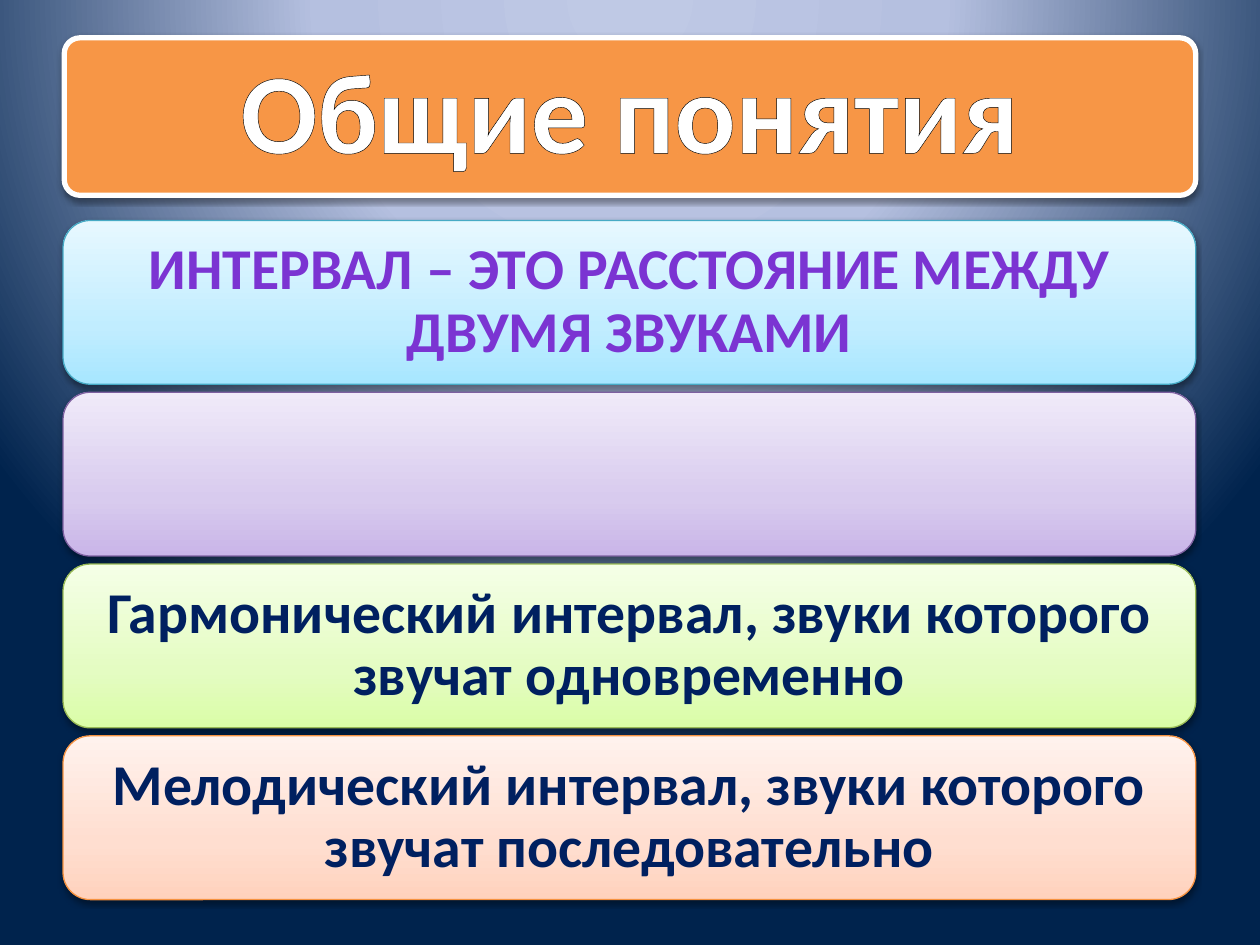
from lxml.etree import SubElement as Sub
from pptx import Presentation
from pptx.dml.color import RGBColor as Rgb
from pptx.enum.shapes import MSO_SHAPE as Kind
from pptx.enum.text import MSO_ANCHOR as Anchor, PP_ALIGN as Align
from pptx.oxml.ns import qn
from pptx.oxml.xmlchemy import OxmlElement as Elem
from pptx.util import Inches, Pt

NAVY = "002060"
BANDS = [
    ("46AAC5", [(0, "A7E6FF"), (35, "C1EDFF"), (100, "E7F8FF")],
     "ИНТЕРВАЛ – ЭТО РАССТОЯНИЕ МЕЖДУ ДВУМЯ ЗВУКАМИ",
     [(0, "3D1B67"), (43, "7B34D2"), (48, "7330C4"), (100, "3D1B67")],
     ("5E457C", 0.71)),
    ("7D60A0", [(0, "C9B5E8"), (35, "D8CBEE"), (100, "F0EAF9")],
     "", NAVY, None),
    ("98B955", [(0, "DAFDA7"), (35, "E4FCC2"), (100, "F5FFE7")],
     "Гармонический интервал, звуки которого звучат одновременно",
     NAVY, ("467AB8", 0.83)),
    ("F69240", [(0, "FFD2BD"), (35, "FFDED0"), (100, "FFF2ED")],
     "Мелодический интервал, звуки которого звучат последовательно",
     NAVY, None),
]


def color(text):
    return Rgb.from_string(text)


def add(root, tag, **attrs):
    return Sub(root, qn(tag), {key: str(val) for key, val in attrs.items()})


def blend(fill, root, stops, angle=None):
    fill.gradient()
    grad = root.find(".//" + qn("a:gradFill"))
    for node in list(grad):
        grad.remove(node)
    steps = add(grad, "a:gsLst")
    for pos, tone in stops:
        stop = add(steps, "a:gs", pos=pos * 1000)
        add(stop, "a:srgbClr", val=color(tone))
    if angle is None:
        way = add(grad, "a:path", path="circle")
        add(way, "a:fillToRect", l=50000, t=-80000, r=50000, b=180000)
    else:
        add(grad, "a:lin", ang=angle * 60000, scaled=0)


def paint(fill, root, paint_with, angle):
    if isinstance(paint_with, str):
        fill.solid()
        fill.fore_color.rgb = color(paint_with)
    else:
        blend(fill, root, paint_with, angle)


def shade(shape):
    shape.shadow.inherit = False
    effects = shape.element.spPr.find(qn("a:effectLst"))
    drop = add(effects, "a:outerShdw", blurRad=Pt(3.1), dist=Pt(1.6),
               dir=90 * 60000, rotWithShape=0)
    tone = add(drop, "a:srgbClr", val="000000")
    add(tone, "a:alpha", val=38000)


def outline(run, tone, width):
    line = Elem("a:ln")
    line.set("w", str(Pt(width)))
    add(add(line, "a:solidFill"), "a:srgbClr", val=color(tone))
    run._r.get_or_add_rPr().insert(0, line)


def add_card(slide, box, fill, edge, width):
    shape = slide.shapes.add_shape(
        Kind.ROUNDED_RECTANGLE, *[Inches(size) for size in box])
    paint(shape.fill, shape.element, fill, 270)
    shape.line.color.rgb = color(edge)
    shape.line.width = Pt(width)
    shade(shape)
    return shape


def add_text(shape, text, size, tone, rim, pad):
    frame = shape.text_frame
    frame.word_wrap = True
    frame.vertical_anchor = Anchor.MIDDLE
    frame.margin_left = frame.margin_right = Inches(0.14)
    frame.margin_top = frame.margin_bottom = Inches(pad)
    par = frame.paragraphs[0]
    par.alignment = Align.CENTER
    par.line_spacing = 0.9
    run = par.add_run()
    run.text = text
    font = run.font
    font.name = "Calibri"
    font.size = Pt(size)
    font.bold = True
    paint(font.fill, run._r, tone, 90)
    if rim:
        outline(run, *rim)


def main():
    deck = Presentation()
    deck.slide_width, deck.slide_height = Inches(10), Inches(7.5)
    slide = deck.slides.add_slide(deck.slide_layouts[6])
    blend(slide.background.fill, slide.element,
          [(0, "BFC9E5"), (40, "B5C0E0"), (100, "00234D")])

    title = add_card(slide, (0.51, 0.3, 8.98, 1.25), "F79646", "FFFFFF", 3)
    title.adjustments[0] = 0.1
    add_text(title, "Общие понятия", 65, "FFFFFF", ("000000", 0.75), 0.09)

    top, end, high = 1.75, 7.14, 1.3
    step = (end - top - high) / (len(BANDS) - 1)
    for row, (edge, fill, text, tone, rim) in enumerate(BANDS):
        box = (0.5, top + row * step, 8.99, high)
        card = add_card(slide, box, fill, edge, 0.75)
        if text:
            add_text(card, text, 33, tone, rim, 0.07)
    deck.save("out.pptx")


if __name__ == "__main__":
    main()
